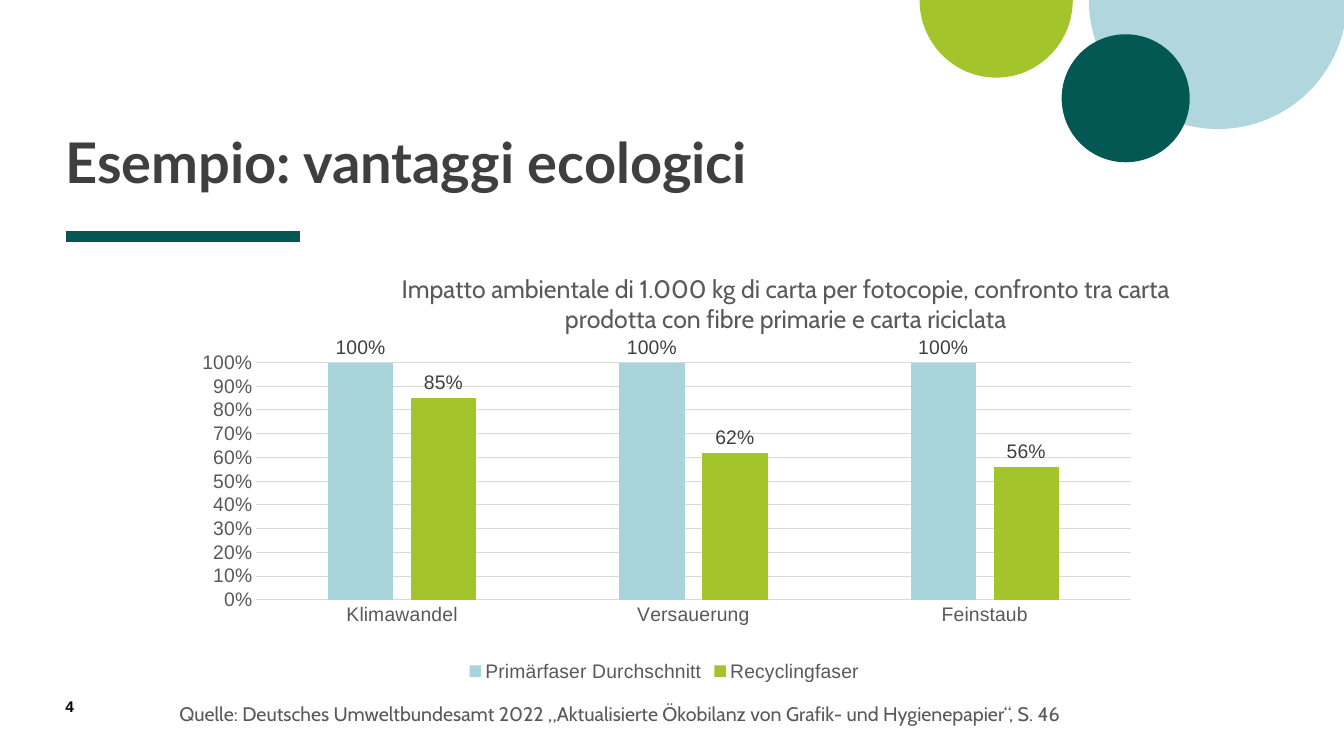
from pptx import Presentation
from pptx.chart.data import CategoryChartData
from pptx.dml.color import RGBColor
from pptx.enum.chart import XL_CHART_TYPE, XL_LABEL_POSITION, XL_LEGEND_POSITION, XL_TICK_MARK
from pptx.enum.shapes import MSO_CONNECTOR, MSO_SHAPE
from pptx.enum.text import MSO_ANCHOR
from pptx.oxml import parse_xml
from pptx.oxml.ns import nsdecls, qn
from pptx.util import Inches, Pt

COLUMNS = XL_CHART_TYPE.COLUMN_CLUSTERED
NO_TICK = XL_TICK_MARK.NONE
OUTSIDE_END = XL_LABEL_POSITION.OUTSIDE_END
LEGEND_BOTTOM = XL_LEGEND_POSITION.BOTTOM
STRAIGHT = MSO_CONNECTOR.STRAIGHT
PIE, OVAL = MSO_SHAPE.PIE, MSO_SHAPE.OVAL
TOP, BOTTOM = MSO_ANCHOR.TOP, MSO_ANCHOR.BOTTOM

WIDTH, HEIGHT = 13.33, 7.5
MARGIN = 0.65
CHART_LEFT = 1.68
HALF_TURN = 108

THEME = {
    "green": "035854", "lime": "A3C42A", "sky": "AFD7DD", "bar": "A9D4DB",
    "grid": "D9D9D9", "grey": "595959",
    "title": {"name": "Lato", "size": 40, "bold": True, "color": "3F3F3F"},
    "number": {"name": "Arial", "size": 11, "bold": True, "color": "000000"},
    "source": {"name": "Cabin", "size": 14, "bold": False, "color": "595959"},
    "heading": {"name": "Cabin", "size": 18, "bold": False, "color": "595959"},
    "axis": {"name": "Arial", "size": 14, "bold": False, "color": "595959"},
    "label": {"name": "Arial", "size": 14, "bold": False, "color": "404040"},
}

TEXTS = [
    ("Esempio: vantaggi ecologici", "title", (MARGIN, 0.3, 10.69, 1.63), BOTTOM, (0, 0), 0.8),
    ("4", "number", (MARGIN, 6.92, 0.57, 0.27), TOP, (0, 0), 1),
    ("Quelle: Deutsches Umweltbundesamt 2022 „Aktualisierte Ökobilanz von Grafik- und Hygienepapier“, S. 46",
     "source", (CHART_LEFT, 6.91, 9.42, 0.34), TOP, (0.1, 0.05), 1),
]
CIRCLES = [
    (PIE, (10.8, -1.28, 2.56, 2.56), "sky"),
    (PIE, (9.12, -0.77, 1.52, 1.54), "lime"),
    (OVAL, (10.53, 0.34, 1.27, 1.27), "green"),
]
CHART_BOX = (CHART_LEFT, 2.56, 9.97, 4.25)
CHART_TITLE = ("Impatto ambientale di 1.000 kg di carta per fotocopie, "
               "confronto tra carta prodotta con fibre primarie e carta riciclata")
CATEGORIES = ["Klimawandel", "Versauerung", "Feinstaub"]
SERIES = [
    ("Primärfaser Durchschnitt", (1, 1, 1), "bar"),
    ("Recyclingfaser", (0.85, 0.62, 0.56), "lime"),
]
TITLE_PLACE = {"xMode": "edge", "yMode": "edge", "x": 0.23, "y": 0.02}
PLOT_PLACE = {"layoutTarget": "inner", "xMode": "edge", "yMode": "edge",
              "x": 0.088, "y": 0.244, "w": 0.883, "h": 0.554}


def inches(values):
    return [Inches(value) for value in values]


def rgb(name):
    return RGBColor.from_string(THEME.get(name, name))


def apply(target, values):
    for name, value in values.items():
        setattr(target, name, value)


def style_font(font, style):
    values = dict(THEME[style])
    font.color.rgb = rgb(values.pop("color"))
    apply(font, {**values, "size": Pt(values["size"])})


def paint(part, color):
    part.fill.solid()
    part.fill.fore_color.rgb = rgb(color)


def draw_line(line, color, width):
    line.color.rgb = rgb(color)
    line.width = Pt(width)


def place(element, position, values):
    for old in element.findall(qn("c:layout")):
        element.remove(old)
    items = "".join(f'<c:{name} val="{value}"/>' for name, value in values.items())
    element.insert(position, parse_xml(
        f'<c:layout {nsdecls("c")}><c:manualLayout>{items}</c:manualLayout></c:layout>'))


def add_text(slide, text, style, box, anchor, insets, spacing):
    frame = slide.shapes.add_textbox(*inches(box)).text_frame
    across, down = inches(insets)
    apply(frame, {"word_wrap": True, "vertical_anchor": anchor,
                  "margin_left": across, "margin_right": across,
                  "margin_top": down, "margin_bottom": down})
    paragraph = frame.paragraphs[0]
    paragraph.line_spacing = spacing
    run = paragraph.add_run()
    run.text = text
    style_font(run.font, style)


def add_circle(slide, kind, box, color):
    shape = slide.shapes.add_shape(kind, *inches(box))
    if kind == PIE:
        shape.adjustments[0] = 0
        shape.adjustments[1] = HALF_TURN
    shape.shadow.inherit = False
    paint(shape, color)
    shape.line.fill.background()


def add_rule(slide):
    rule = slide.shapes.add_connector(STRAIGHT, *inches((MARGIN, 2.35, 2.98, 2.35)))
    draw_line(rule.line, "green", 8)
    rule._element.spPr.append(parse_xml(f'<a:effectLst {nsdecls("a")}/>'))


def add_impact_chart(slide):
    data = CategoryChartData(number_format="0%")
    data.categories = CATEGORIES
    for name, values, _ in SERIES:
        data.add_series(name, values)
    chart = slide.shapes.add_chart(COLUMNS, *inches(CHART_BOX), data).chart
    style_font(chart.font, "axis")

    chart.has_title = True
    heading = chart.chart_title.text_frame.paragraphs[0].add_run()
    heading.text = CHART_TITLE
    style_font(heading.font, "heading")
    place(chart.chart_title._element, 1, TITLE_PLACE)

    chart.has_legend = True
    apply(chart.legend, {"position": LEGEND_BOTTOM, "include_in_layout": False})
    style_font(chart.legend.font, "axis")

    for axis in (chart.category_axis, chart.value_axis):
        apply(axis, {"major_tick_mark": NO_TICK, "minor_tick_mark": NO_TICK})
        style_font(axis.tick_labels.font, "axis")
    draw_line(chart.category_axis.format.line, "grid", 0.75)
    value_axis = chart.value_axis
    apply(value_axis, {"minimum_scale": 0, "maximum_scale": 1, "major_unit": 0.1})
    apply(value_axis.tick_labels, {"number_format": "0%", "number_format_is_linked": False})
    value_axis.format.line.fill.background()
    draw_line(value_axis.major_gridlines.format.line, "grid", 0.75)

    plot = chart.plots[0]
    apply(plot, {"gap_width": 219, "overlap": -27, "vary_by_categories": False})
    for series, (_, _, color) in zip(plot.series, SERIES):
        paint(series.format, color)
        labels = series.data_labels
        apply(labels, {"show_value": True, "position": OUTSIDE_END,
                       "number_format": "0%", "number_format_is_linked": False})
        style_font(labels.font, "label")
    place(chart._chartSpace.chart.plotArea, 0, PLOT_PLACE)


def main():
    presentation = Presentation()
    apply(presentation, {"slide_width": Inches(WIDTH), "slide_height": Inches(HEIGHT)})
    slide = presentation.slides.add_slide(presentation.slide_layouts[6])
    add_rule(slide)
    for circle in CIRCLES:
        add_circle(slide, *circle)
    add_impact_chart(slide)
    for text in TEXTS:
        add_text(slide, *text)
    presentation.save("out.pptx")


if __name__ == "__main__":
    main()
